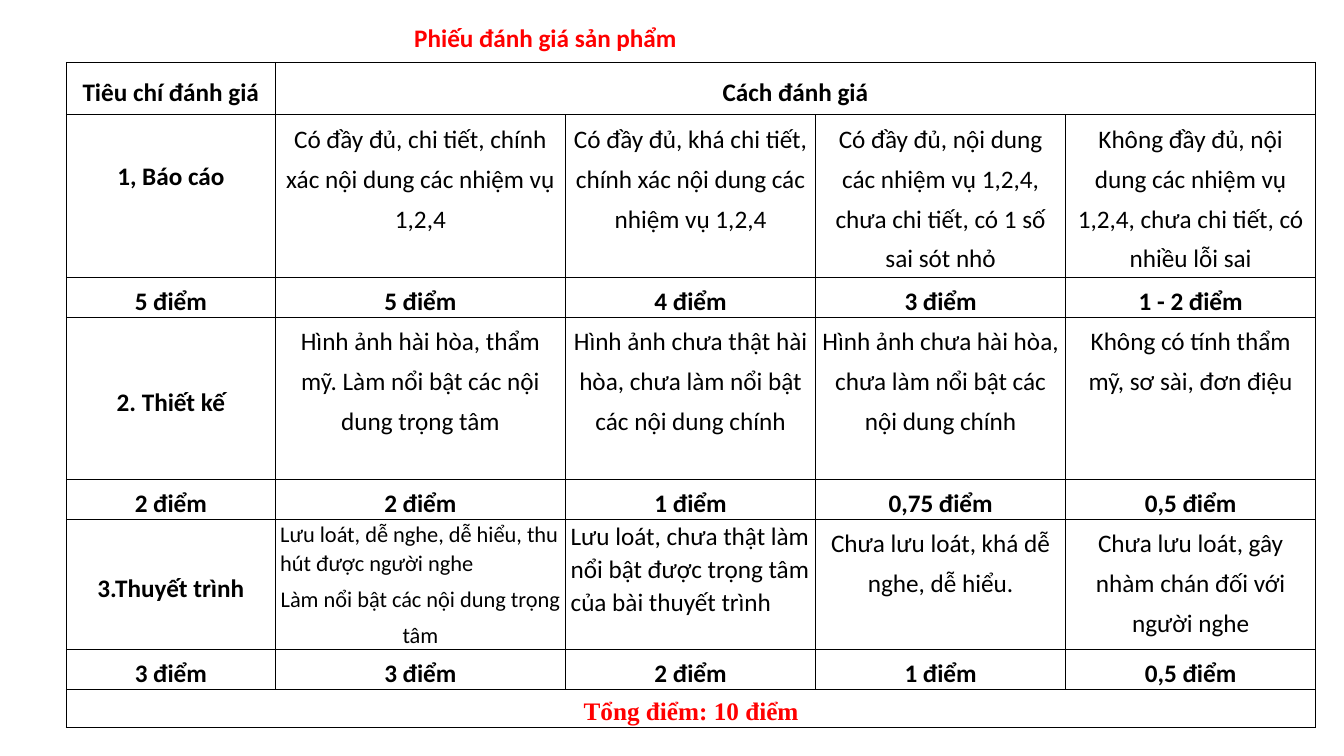
import lxml.etree
import pptx
import pptx.dml.color
import pptx.enum.text
import pptx.oxml.ns
import pptx.util

Inches = pptx.util.Inches
Pt = pptx.util.Pt
ALIGN = pptx.enum.text.PP_ALIGN
ANCHOR = pptx.enum.text.MSO_ANCHOR
qn = pptx.oxml.ns.qn

BLACK = pptx.dml.color.RGBColor(0, 0, 0)
RED = pptx.dml.color.RGBColor(255, 0, 0)
WHITE = pptx.dml.color.RGBColor(255, 255, 255)

COLUMN_WIDTHS = [2.07, 2.88, 2.48, 2.48, 2.48]
ROW_HEIGHTS = [0.52, 1.61, 0.38, 1.61, 0.38, 1.23, 0.38, 0.38]
RUBRIC = [
    ["Tiêu chí đánh giá", "Cách đánh giá"],
    ["1, Báo cáo",
     "Có đầy đủ, chi tiết, chính xác nội dung các nhiệm vụ 1,2,4",
     "Có đầy đủ, khá chi tiết, chính xác nội dung các nhiệm vụ 1,2,4",
     "Có đầy đủ, nội dung các nhiệm vụ 1,2,4, chưa chi tiết, có 1 số sai sót nhỏ",
     "Không đầy đủ, nội dung các nhiệm vụ 1,2,4, chưa chi tiết, có nhiều lỗi sai"],
    ["5 điểm", "5 điểm", "4 điểm", "3 điểm", "1 - 2 điểm"],
    ["2. Thiết kế",
     "Hình ảnh hài hòa, thẩm mỹ. Làm nổi bật các nội dung trọng tâm",
     "Hình ảnh chưa thật hài hòa, chưa làm nổi bật các nội dung chính",
     "Hình ảnh chưa hài hòa, chưa làm nổi bật các nội dung chính",
     "Không có tính thẩm mỹ, sơ sài, đơn điệu"],
    ["2 điểm", "2 điểm", "1 điểm", "0,75 điểm", "0,5 điểm"],
    ["3.Thuyết trình",
     "Lưu loát, dễ nghe, dễ hiểu, thu hút được người nghe\n"
     "Làm nổi bật các nội dung trọng tâm",
     "Lưu loát, chưa thật làm nổi bật được trọng tâm của bài thuyết trình",
     "Chưa lưu loát, khá dễ nghe, dễ hiểu.",
     "Chưa lưu loát, gây nhàm chán đối với người nghe"],
    ["3 điểm", "3 điểm", "2 điểm", "1 điểm", "0,5 điểm"],
    ["Tổng điểm: 10 điểm"],
]
DESCRIPTION_ROWS = (1, 3, 5)
LAST_ROW = len(RUBRIC) - 1


def style_paragraph(paragraph, size=18, bold=True, color=BLACK, name="Calibri"):
    paragraph.font.size = Pt(size)
    paragraph.font.bold = bold
    paragraph.font.color.rgb = color
    paragraph.font.name = name


def style_cell(cell):
    properties = cell._tc.get_or_add_tcPr()
    for side in ("a:lnL", "a:lnR", "a:lnT", "a:lnB"):
        line = lxml.etree.SubElement(properties, qn(side), w=str(Pt(1)))
        fill = lxml.etree.SubElement(line, qn("a:solidFill"))
        lxml.etree.SubElement(fill, qn("a:srgbClr"), val=str(BLACK))
    cell.fill.solid()
    cell.fill.fore_color.rgb = WHITE
    cell.margin_left = cell.margin_right = Inches(0.05)
    cell.margin_top = cell.margin_bottom = 0


def write_cell(cell, text, row, column):
    cell.text = text
    middle = row == 0 or (column == 0 and row != LAST_ROW)
    cell.vertical_anchor = ANCHOR.MIDDLE if middle else ANCHOR.TOP
    for paragraph in cell.text_frame.paragraphs:
        paragraph.alignment = ALIGN.CENTER
        paragraph.line_spacing = 1.3
        if row == LAST_ROW:
            style_paragraph(paragraph, color=RED, name="Times New Roman")
        else:
            style_paragraph(paragraph, bold=column == 0 or row not in DESCRIPTION_ROWS)


def add_title(slide, left, top, width, height):
    box = slide.shapes.add_textbox(Inches(left), Inches(top), Inches(width), Inches(height))
    box.text_frame.word_wrap = False
    box.text_frame.auto_size = pptx.enum.text.MSO_AUTO_SIZE.SHAPE_TO_FIT_TEXT
    paragraph = box.text_frame.paragraphs[0]
    paragraph.text = "Phiếu đánh giá sản phẩm"
    style_paragraph(paragraph, color=RED)


def add_rubric(slide, left, top):
    table = slide.shapes.add_table(
        len(ROW_HEIGHTS), len(COLUMN_WIDTHS), Inches(left), Inches(top),
        Inches(sum(COLUMN_WIDTHS)), Inches(sum(ROW_HEIGHTS))).table
    table.first_row = table.horz_banding = False
    for column, width in zip(table.columns, COLUMN_WIDTHS):
        column.width = Inches(width)
    for row, height in zip(table.rows, ROW_HEIGHTS):
        row.height = Inches(height)
    for cell in table.iter_cells():
        style_cell(cell)
        style_paragraph(cell.text_frame.paragraphs[0])
    table.cell(0, 1).merge(table.cell(0, 4))
    table.cell(LAST_ROW, 0).merge(table.cell(LAST_ROW, 4))
    for row, texts in enumerate(RUBRIC):
        for column, text in enumerate(texts):
            write_cell(table.cell(row, column), text, row, column)

    report = table.cell(1, 0)
    report.margin_bottom = Inches(0.4)
    report.text_frame.paragraphs[0].line_spacing = 1.07
    fluent = table.cell(5, 1).text_frame.paragraphs
    for paragraph in fluent:
        paragraph.font.size = Pt(16)
    for paragraph in (fluent[0], table.cell(5, 2).text_frame.paragraphs[0]):
        paragraph.alignment = ALIGN.LEFT
        paragraph.line_spacing = 1.07


def main():
    presentation = pptx.Presentation()
    presentation.slide_width = Inches(13.33)
    presentation.slide_height = Inches(7.5)
    slide = presentation.slides.add_slide(presentation.slide_layouts[6])
    add_rubric(slide, 0.66, 0.62)
    add_title(slide, 4.01, 0.17, 2.83, 0.4)
    presentation.save("out.pptx")


if __name__ == "__main__":
    main()
